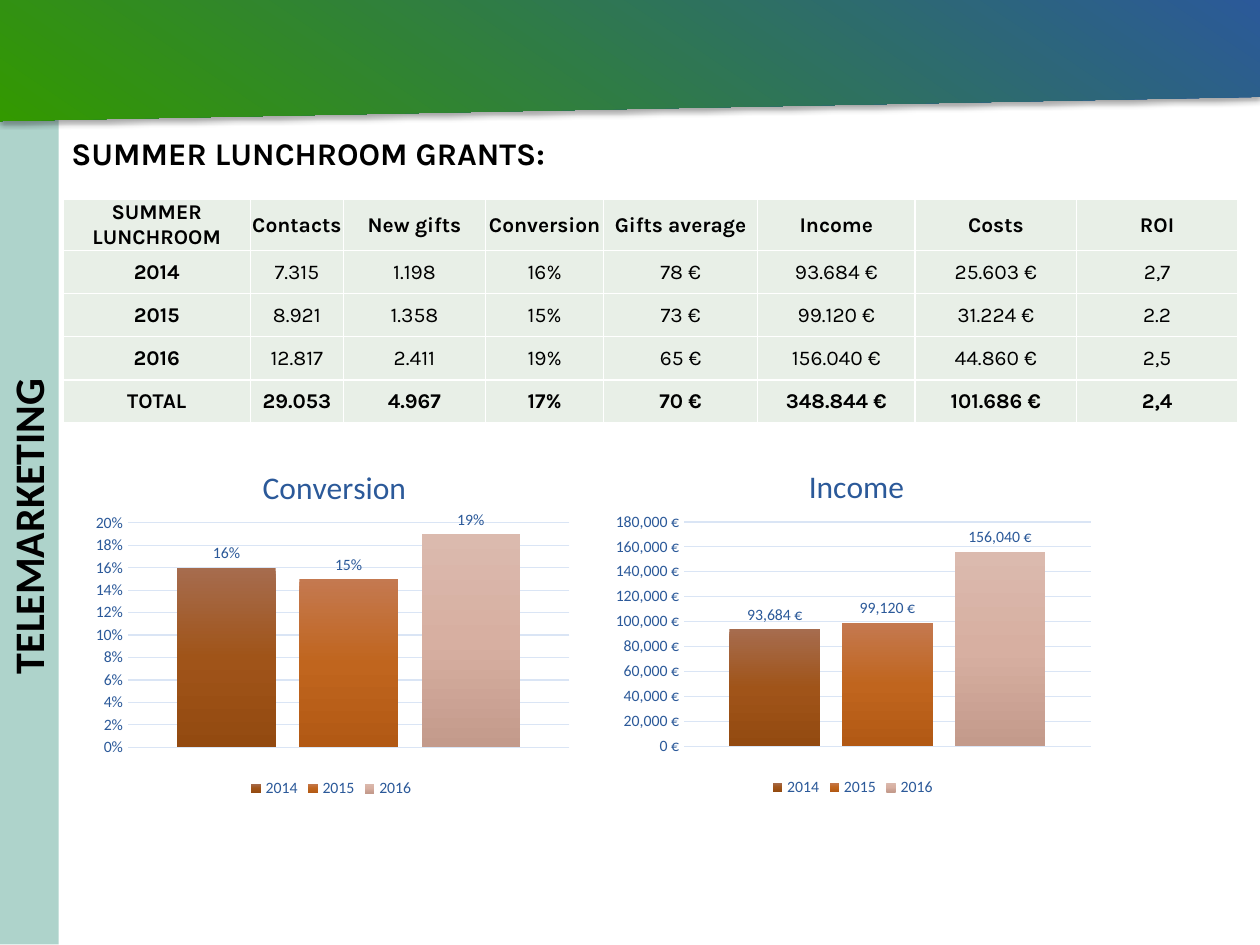
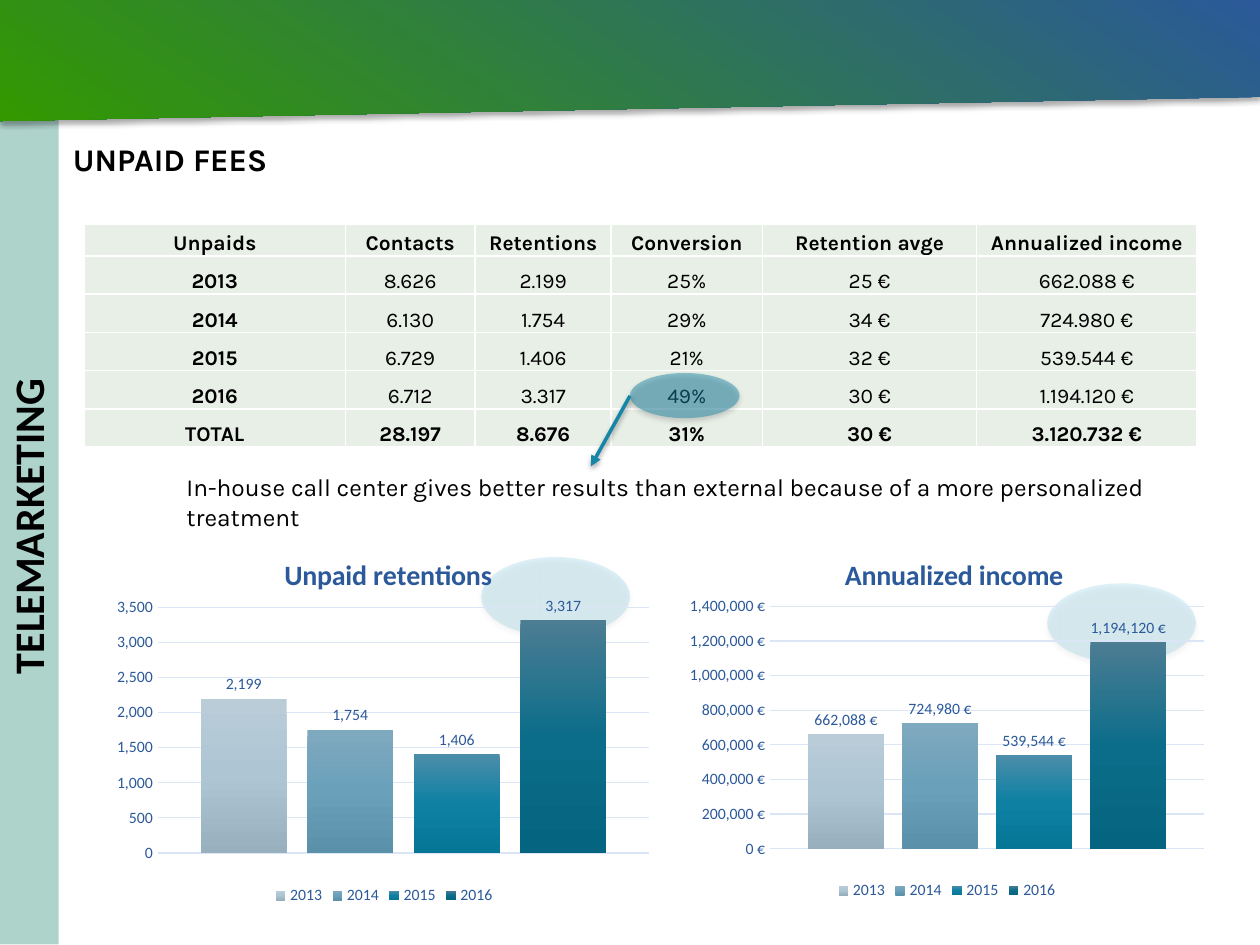
from dataclasses import dataclass

from lxml import etree
from pptx import Presentation
from pptx import util as u
from pptx.chart import data as chart_data
from pptx.dml import color
from pptx.enum import chart as charts, shapes, text
from pptx.oxml import ns


@dataclass(frozen=True)
class Theme:
    ink: str = "000000"
    white: str = "FFFFFF"
    mint: str = "AED3CB"
    cell: str = "E8EFE7"
    blue: str = "2B5999"
    green: str = "339900"
    grid: str = "DAE5F5"
    teal: str = "1686A7"
    sky: str = "0099CC"
    browns: tuple = (
        ("A66C4E", "A05419", "934A10"),
        ("C47950", "C0651E", "B25914"),
        ("DBBAAE", "D7AFA1", "C39A8B"),
    )
    blues: tuple = (
        ("B9CCD8", "AEC5D4", "98B0BE"),
        ("7FA9BF", "6AA0BA", "5A90AA"),
        ("4C8DA9", "0E81A3", "067697"),
        ("4C7D93", "0C6D8A", "05647F"),
    )
    body_font: str = "Karla"
    chart_font: str = "Calibri"
    sidebar_size: int = 24
    title_size: int = 18
    note_size: int = 14
    table_size: int = 12
    label_size: int = 9


THEME = Theme()
EURO = '#,##0\\ "€"'


def rgb(value):
    return color.RGBColor.from_string(value)


def add_xml(parent, tag, **attributes):
    values = {name: str(value) for name, value in attributes.items()}
    return etree.SubElement(parent, ns.qn(tag), values)


def place(left, top, width, height):
    return u.Cm(left), u.Cm(top), u.Cm(width), u.Cm(height)


def set_gradient(fill, properties, colours, angle):
    fill.solid()
    solid = properties.find(ns.qn("a:solidFill"))
    gradient = etree.Element(ns.qn("a:gradFill"), {"rotWithShape": "1"})
    stops = add_xml(gradient, "a:gsLst")
    for index, value in enumerate(colours):
        stop = add_xml(stops, "a:gs", pos=100000 * index // (len(colours) - 1))
        add_xml(stop, "a:srgbClr", val=value)
    add_xml(gradient, "a:lin", ang=angle * 60000, scaled=0)
    properties.replace(solid, gradient)


def add_shadow(effects):
    shadow = add_xml(effects, "a:outerShdw", blurRad=u.Pt(3.1), dist=u.Pt(1.8),
                     dir=5400000, rotWithShape=0)
    add_xml(add_xml(shadow, "a:srgbClr", val=THEME.ink), "a:alpha", val=35000)


def set_layout(owner, **fractions):
    layout = owner.find(ns.qn("c:layout"))
    if layout is None:
        layout = etree.Element(ns.qn("c:layout"))
        owner.insert(0, layout)
    manual = add_xml(layout, "c:manualLayout")
    if "w" in fractions:
        add_xml(manual, "c:layoutTarget", val="inner")
    for axis in "xy":
        add_xml(manual, f"c:{axis}Mode", val="edge")
    for name, value in fractions.items():
        add_xml(manual, f"c:{name}", val=round(value, 3))


class SlideBuilder:
    def __init__(self, deck, theme):
        self.deck = deck
        self.theme = theme
        self.page = None

    def start(self, title, left, top):
        self.page = self.deck.slides.add_slide(self.deck.slide_layouts[6])
        theme = self.theme
        sidebar = self.shape(shapes.MSO_SHAPE.RECTANGLE, (-7.87, 9.98, 16.84, 1.27), theme.mint)
        sidebar.rotation = 270
        para = sidebar.text_frame.paragraphs[0]
        para.alignment = text.PP_ALIGN.CENTER
        self.span(para, "TELEMARKETING", theme.sidebar_size, True, theme.chart_font)
        band = self.shape(shapes.MSO_SHAPE.FLOWCHART_MANUAL_INPUT, (0, 0, 25.4, 2.44),
                          theme.blue, shadow=True)
        band.rotation = 180
        set_gradient(band.fill, band._element.spPr, (theme.blue, theme.green), 304)
        self.text(title, (left, top, 20, 1.02), theme.title_size, True)

    def span(self, para, words, size, bold=False, font=None, colour=None):
        span = para.add_run()
        span.text = words
        span.font.name = font or self.theme.body_font
        span.font.size = u.Pt(size)
        span.font.bold = bold
        span.font.color.rgb = rgb(colour or self.theme.ink)

    def text(self, words, area, size, bold=False):
        box = self.page.shapes.add_textbox(*place(*area))
        box.text_frame.word_wrap = True
        self.span(box.text_frame.paragraphs[0], words, size, bold)

    def shape(self, kind, area, fill, opacity=100, shadow=False):
        shape = self.page.shapes.add_shape(kind, *place(*area))
        shape.fill.solid()
        shape.fill.fore_color.rgb = rgb(fill)
        shape.line.fill.background()
        shape.shadow.inherit = False
        properties = shape._element.spPr
        if opacity < 100:
            tint = properties.find(ns.qn("a:solidFill"))[0]
            add_xml(tint, "a:alpha", val=opacity * 1000)
        if shadow:
            add_shadow(properties.find(ns.qn("a:effectLst")))
        return shape

    def highlight(self, area, fill, opacity):
        self.shape(shapes.MSO_SHAPE.OVAL, area, fill, opacity, True)

    def arrow(self, start, end):
        line = self.page.shapes.add_connector(
            shapes.MSO_CONNECTOR.STRAIGHT, *place(*start, *end))
        line.line.color.rgb = rgb(self.theme.teal)
        line.line.width = u.Pt(2)
        add_xml(line.line._get_or_add_ln(), "a:tailEnd", type="triangle")
        add_shadow(add_xml(line._element.spPr, "a:effectLst"))

    def table(self, left, top, widths, heights, rows, anchor):
        frame = self.page.shapes.add_table(
            len(rows), len(widths), *place(left, top, sum(widths), sum(heights)))
        table = frame.table
        table.first_row = table.horz_banding = False
        for column, width in zip(table.columns, widths):
            column.width = u.Cm(width)
        for row, height in zip(table.rows, heights):
            row.height = u.Cm(height)
        for row_index, values in enumerate(rows):
            for column_index, value in enumerate(values):
                strong = row_index in (0, len(rows) - 1) or column_index == 0
                self.cell(table.cell(row_index, column_index), value, strong, anchor)

    def cell(self, cell, value, strong, anchor):
        cell.margin_left = cell.margin_right = cell.margin_top = u.Cm(0.02)
        cell.margin_bottom = 0
        cell.vertical_anchor = anchor
        para = cell.text_frame.paragraphs[0]
        para.alignment = text.PP_ALIGN.CENTER
        self.span(para, value, self.theme.table_size, strong)
        properties = cell._tc.get_or_add_tcPr()
        for side in ("lnL", "lnR", "lnT", "lnB"):
            border = add_xml(properties, f"a:{side}", w=u.Pt(1))
            add_xml(add_xml(border, "a:solidFill"), "a:srgbClr", val=self.theme.white)
        cell.fill.solid()
        cell.fill.fore_color.rgb = rgb(self.theme.cell)

    def label_font(self, font):
        font.name = self.theme.chart_font
        font.size = u.Pt(self.theme.label_size)
        font.color.rgb = rgb(self.theme.blue)

    def chart(self, title, area, values, palette, number_format, step, top_value,
              title_at, plot_at, title_size, bold=False):
        theme = self.theme
        source = chart_data.CategoryChartData(number_format=number_format)
        source.categories = ["1"]
        for year, value in values.items():
            source.add_series(year, [value])
        chart = self.page.shapes.add_chart(
            charts.XL_CHART_TYPE.COLUMN_CLUSTERED, *place(*area), source).chart
        self.label_font(chart.font)

        chart.has_title = True
        para = chart.chart_title.text_frame.paragraphs[0]
        self.span(para, title, title_size, bold, theme.chart_font, theme.blue)
        set_layout(chart.chart_title._element, x=title_at[0], y=title_at[1])

        chart.has_legend = True
        chart.legend.position = charts.XL_LEGEND_POSITION.BOTTOM
        chart.legend.include_in_layout = False
        self.label_font(chart.legend.font)

        chart.category_axis.visible = False
        axis = chart.value_axis
        axis.minimum_scale, axis.maximum_scale, axis.major_unit = 0, top_value, step
        axis.major_tick_mark = charts.XL_TICK_MARK.NONE
        axis.format.line.fill.background()
        axis.major_gridlines.format.line.color.rgb = rgb(theme.grid)
        axis.major_gridlines.format.line.width = u.Pt(0.75)
        axis.tick_labels.number_format = number_format
        axis.tick_labels.number_format_is_linked = False
        self.label_font(axis.tick_labels.font)

        plot = chart.plots[0]
        plot.vary_by_categories = False
        plot.gap_width, plot.overlap = 100, -24
        plot.has_data_labels = True
        labels = plot.data_labels
        labels.show_value = True
        labels.position = charts.XL_LABEL_POSITION.OUTSIDE_END
        labels.number_format = number_format
        labels.number_format_is_linked = False
        self.label_font(labels.font)
        for series, colours in zip(plot.series, palette):
            fill = series.format.fill
            set_gradient(fill, series._element.find(ns.qn("c:spPr")), colours, 90)

        space = chart._chartSpace
        plot_area = space.find(".//" + ns.qn("c:plotArea"))
        left, top = plot_at
        set_layout(plot_area, x=left, y=top, w=0.98 - left, h=0.85 - top)
        add_xml(add_xml(plot_area, "c:spPr"), "a:noFill")
        clear = etree.Element(ns.qn("c:spPr"))
        add_xml(clear, "a:noFill")
        add_xml(add_xml(clear, "a:ln"), "a:noFill")
        space.find(ns.qn("c:txPr")).addprevious(clear)


def build_lunchroom(builder):
    builder.start("SUMMER LUNCHROOM GRANTS:", 1.19, 2.57)
    rows = (
        ("SUMMER LUNCHROOM", "Contacts", "New gifts", "Conversion", "Gifts average",
         "Income", "Costs", "ROI"),
        ("2014", "7.315", "1.198", "16%", "78 €", "93.684 €", "25.603 €", "2,7"),
        ("2015", "8.921", "1.358", "15%", "73 €", "99.120 €", "31.224 €", "2.2"),
        ("2016", "12.817", "2.411", "19%", "65 €", "156.040 €", "44.860 €", "2,5"),
        ("TOTAL", "29.053", "4.967", "17%", "70 €", "348.844 €", "101.686 €", "2,4"),
    )
    builder.table(1.27, 4.01, (3.78, 1.87, 2.87, 2.38, 3.1, 3.18, 3.25, 3.25),
                  [0.95] + [0.87] * 4, rows, text.MSO_ANCHOR.MIDDLE)
    builder.chart("Conversion", (1.68, 8.76, 10, 7.42),
                  {"2014": 0.16, "2015": 0.15, "2016": 0.19}, THEME.browns, "0%",
                  0.02, 0.2, (0.35, 0.07), (0.09, 0.24), 18)
    builder.chart("Income", (12.19, 8.74, 10, 7.42),
                  {"2014": 93684, "2015": 99120, "2016": 156040}, THEME.browns, EURO,
                  20000, 180000, (0.4, 0.07), (0.16, 0.24), 18)


def build_unpaid(builder):
    builder.start("UNPAID FEES", 1.22, 2.69)
    for left, top in ((21.11, 11.76), (9.7, 11.23)):
        builder.highlight((left, top, 3, 1.6), THEME.sky, 13)
    rows = (
        ("Unpaids", "Contacts", "Retentions", "Conversion", "Retention avge",
         "Annualized income"),
        ("2013", "8.626", "2.199", "25%", "25 €", "662.088 €"),
        ("2014", "6.130", "1.754", "29%", "34 €", "724.980 €"),
        ("2015", "6.729", "1.406", "21%", "32 €", "539.544 €"),
        ("2016", "6.712", "3.317", "49%", "30 €", "1.194.120 €"),
        ("TOTAL", "28.197", "8.676", "31%", "30 €", "3.120.732 €"),
    )
    builder.table(1.7, 4.52, (5.26, 2.62, 2.74, 3.05, 4.32, 4.44),
                  [0.64] + [0.77] * 5, rows, text.MSO_ANCHOR.BOTTOM)
    builder.chart("Unpaid retentions", (2.18, 10.72, 11.13, 7.62),
                  {"2013": 2199, "2014": 1754, "2015": 1406, "2016": 3317},
                  THEME.blues, "#,##0", 500, 3500, (0.31, 0.05), (0.09, 0.2), 16, True)
    builder.chart("Annualized income", (13.69, 10.72, 10.8, 7.52),
                  {"2013": 662088, "2014": 724980, "2015": 539544, "2016": 1194120},
                  THEME.blues, EURO, 200000, 1400000, (0.3, 0.05), (0.17, 0.2), 16, True)
    builder.highlight((12.7, 7.52, 2.21, 0.91), THEME.teal, 46)
    builder.text("In-house call center gives better results than external because of "
                 "a more personalized treatment", (3.51, 9.4, 21.31, 1.45), THEME.note_size)
    builder.arrow((12.7, 7.98), (11.91, 9.4))


def main():
    deck = Presentation()
    deck.slide_width, deck.slide_height = u.Cm(25.4), u.Cm(19.05)
    builder = SlideBuilder(deck, THEME)
    build_lunchroom(builder)
    build_unpaid(builder)
    deck.save("out.pptx")


if __name__ == "__main__":
    main()
